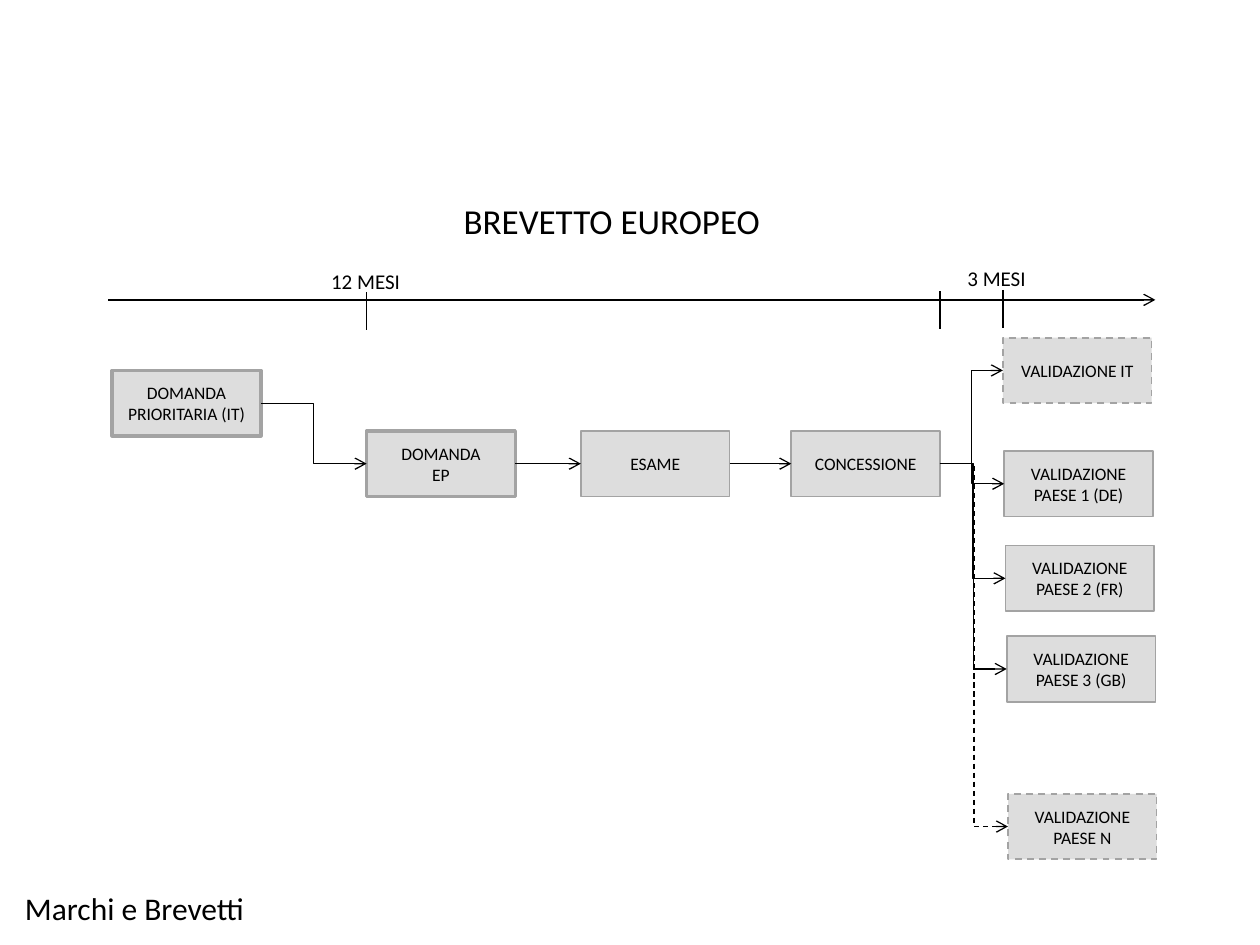
from pptx import Presentation
from pptx.dml.color import RGBColor
from pptx.enum.dml import MSO_LINE
from pptx.enum.shapes import MSO_CONNECTOR, MSO_SHAPE
from pptx.enum.text import MSO_ANCHOR, MSO_AUTO_SIZE, PP_ALIGN
from pptx.oxml.ns import qn
from pptx.util import Inches, Pt
from lxml import etree

STRAIGHT, ELBOW = MSO_CONNECTOR.STRAIGHT, MSO_CONNECTOR.ELBOW
DASH = MSO_LINE.DASH
RECTANGLE = MSO_SHAPE.RECTANGLE
MIDDLE, TOP = MSO_ANCHOR.MIDDLE, MSO_ANCHOR.TOP
CENTER, LEFT = PP_ALIGN.CENTER, PP_ALIGN.LEFT
FIT_SHAPE = MSO_AUTO_SIZE.SHAPE_TO_FIT_TEXT
LEFT_SITE, RIGHT_SITE = 1, 3
BOX_W, BOX_H = Inches(1.18), Inches(0.52)


def write(shape, text, size, align, anchor, wrap):
    frame = shape.text_frame
    frame.text = text
    frame.word_wrap = wrap
    frame.vertical_anchor = anchor
    for paragraph in frame.paragraphs:
        paragraph.alignment = align
        paragraph.font.name = "Calibri"
        paragraph.font.size = Pt(size)
        paragraph.font.color.rgb = RGBColor.from_string("000000")


def connect(kind, x1, y1, x2, y2, arrow=True, dash=None):
    """Draw a thin black line without a shadow."""
    line = slide.shapes.add_connector(kind, x1, y1, x2, y2)
    line.line.color.rgb = RGBColor.from_string("000000")
    line.line.width = Pt(0.75)
    if dash:
        line.line.dash_style = dash
    if arrow:
        etree.SubElement(line.line._get_or_add_ln(), qn("a:tailEnd"), type="arrow")
    etree.SubElement(line._element.spPr, qn("a:effectLst"))
    return line


prs = Presentation()
prs.slide_width, prs.slide_height = Inches(10), Inches(7.5)
slide = prs.slides.add_slide(prs.slide_layouts[5])

title = slide.shapes.title
title.left, title.top = Inches(3.58), Inches(1.53)
title.width, title.height = Inches(2.57), Inches(0.44)
write(title, "BREVETTO EUROPEO", 20, LEFT, TOP, False)
title.text_frame.auto_size = FIT_SHAPE

labels = [
    ("Marchi e Brevetti", 18, 0.1, 7.01, 1.97, 0.4),
    ("12 MESI", 12, 2.53, 2.08, 0.76, 0.3),
    ("3 MESI", 12, 7.58, 2.06, 0.67, 0.3),
]
for text, size, *place in labels:
    label = slide.shapes.add_textbox(*map(Inches, place))
    write(label, text, size, LEFT, TOP, False)
    label.text_frame.auto_size = FIT_SHAPE

# Timeline and its ticks
connect(STRAIGHT, Inches(0.86), Inches(2.38), Inches(9.17), Inches(2.38))
for x, y in [(2.91, 2.32), (7.46, 2.31), (7.96, 2.3)]:
    connect(STRAIGHT, Inches(x), Inches(y), Inches(x), Inches(y + 0.3), arrow=False)

# Procedure steps: key, text, left, top, border width, dash
steps = [
    ("priority", "DOMANDA\nPRIORITARIA (IT)", 0.89, 2.94, 2, None),
    ("ep", "DOMANDA\nEP", 2.91, 3.42, 2, None),
    ("exam", "ESAME", 4.61, 3.42, 1, None),
    ("grant", "CONCESSIONE", 6.28, 3.42, 1, None),
    ("it", "VALIDAZIONE IT", 7.96, 2.68, 1, DASH),
    ("de", "VALIDAZIONE PAESE 1 (DE)", 7.97, 3.58, 1, None),
    ("fr", "VALIDAZIONE PAESE 2 (FR)", 7.98, 4.33, 1, None),
    ("gb", "VALIDAZIONE PAESE 3 (GB)", 7.99, 5.05, 1, None),
    ("n", "VALIDAZIONE PAESE N", 8, 6.3, 1, DASH),
]
boxes = {}
for key, text, x, y, border, dash in steps:
    box = slide.shapes.add_shape(RECTANGLE, Inches(x), Inches(y), BOX_W, BOX_H)
    box.shadow.inherit = False
    box.fill.solid()
    box.fill.fore_color.rgb = RGBColor.from_string("DDDDDD")
    box.line.color.rgb = RGBColor.from_string("A3A3A3")
    box.line.width = Pt(border)
    if dash:
        box.line.dash_style = dash
    write(box, text, 10, CENTER, MIDDLE, True)
    boxes[key] = box

flow = [
    ("priority", "ep", ELBOW, None),
    ("ep", "exam", STRAIGHT, None),
    ("exam", "grant", STRAIGHT, None),
    ("grant", "it", ELBOW, None),
    ("grant", "de", ELBOW, None),
    ("grant", "fr", ELBOW, None),
    ("grant", "gb", ELBOW, None),
    ("grant", "n", ELBOW, DASH),
]
for source, target, kind, dash in flow:
    start, end = boxes[source], boxes[target]
    arrow = connect(kind, start.left + BOX_W, start.top + BOX_H // 2,
                    end.left, end.top + BOX_H // 2, dash=dash)
    arrow.begin_connect(start, RIGHT_SITE)
    arrow.end_connect(end, LEFT_SITE)

prs.save("out.pptx")
